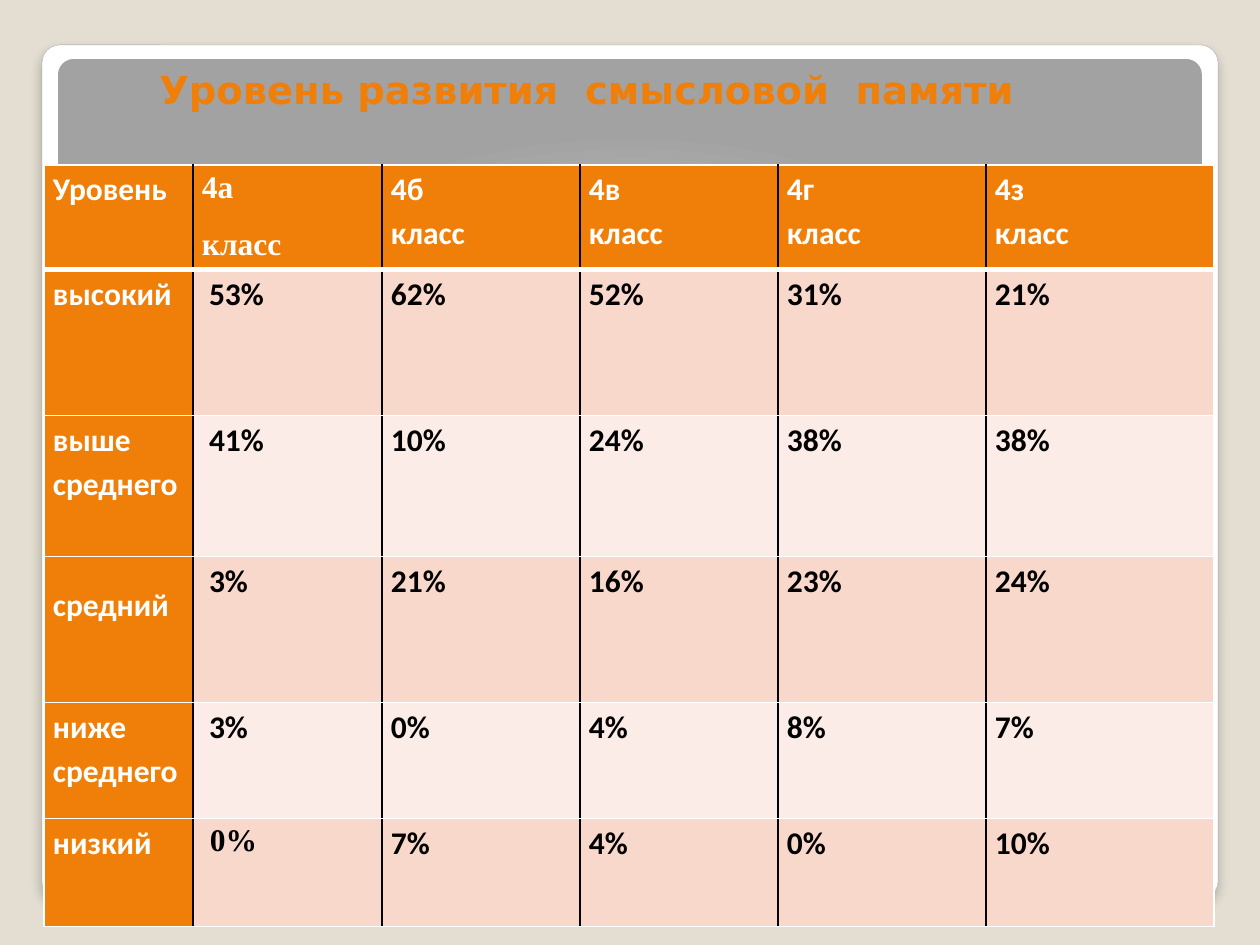
from typing import NamedTuple

from pptx import Presentation
from pptx import util as u
from pptx.dml.color import RGBColor
from pptx.enum import shapes, text
from pptx.oxml import parse_xml
from pptx.oxml.ns import nsdecls, qn

PX_PER_INCH = 126
ORANGE, WHITE, BLACK = "F07F09", "FFFFFF", "000000"
BANDS = ("F9D8CC", "FCECE7")
SERIF = "Times New Roman"


class Panel(NamedTuple):
    box: tuple[int, int, int, int]
    stops: tuple[tuple[int, str], ...]
    direction: str


class Level(NamedTuple):
    label: str
    shares: tuple[str, ...]
    height: int
    label_top: int = 0


CARD = Panel((42, 45, 1176, 854),
             ((0, WHITE), (98, WHITE), (99, "F7F7F7"), (100, "DADADA")),
             '<a:lin ang="5400000" scaled="0"/>')
BACKDROP = Panel((58, 59, 1144, 756),
                 ((0, WHITE), (55, "E1E1E1"), (100, "A2A2A2")),
                 '<a:path path="circle"><a:fillToRect l="50000" t="175000" '
                 'r="50000" b="-75000"/></a:path>')
CLASSES = ("4а", "4б", "4в", "4г", "4з")
COLUMN_WIDTHS = (149, 189, 198, 198, 208, 228)
HEADER_HEIGHT = 92
LEVELS = (
    Level("высокий", (" 53%", "62%", "52%", "31%", "21%"), 146),
    Level("выше\nсреднего", (" 41%", "10%", "24%", "38%", "38%"), 141),
    Level("средний", (" 3%", "21%", "16%", "23%", "24%"), 146, 24),
    Level("ниже\nсреднего", (" 3%", "0%", "4%", "8%", "7%"), 116),
    Level("низкий", (" 0%", "7%", "4%", "0%", "10%"), 108),
)


def px(length: int) -> int:
    return round(length * 914400 / PX_PER_INCH)


def rgb(color: str) -> RGBColor:
    return RGBColor.from_string(color)


def write(frame, content: str, *, size: int = 18, font: str = "Calibri",
          color: str = BLACK, spacing: float = 1.0, after: int = 0) -> None:
    for index, line in enumerate(content.split("\n")):
        paragraph = frame.add_paragraph() if index else frame.paragraphs[0]
        paragraph.line_spacing = spacing
        paragraph.space_after = u.Pt(after)
        run = paragraph.add_run()
        run.text = line
        run.font.size = u.Pt(size)
        run.font.name = font
        run.font.bold = True
        run.font.color.rgb = rgb(color)


def draw_panel(slide, panel: Panel):
    shape = slide.shapes.add_shape(shapes.MSO_SHAPE.ROUNDED_RECTANGLE,
                                   *map(px, panel.box))
    shape.adjustments[0] = 0.021
    shape.line.fill.background()
    shape.shadow.inherit = False
    stops = "".join(
        f'<a:gs pos="{position * 1000}"><a:srgbClr val="{color}"/></a:gs>'
        for position, color in panel.stops)
    shape._element.spPr.insert(2, parse_xml(
        f'<a:gradFill {nsdecls("a")} rotWithShape="1"><a:gsLst>{stops}</a:gsLst>'
        f'{panel.direction}</a:gradFill>'))
    return shape


def outline_and_shadow(card) -> None:
    card.line.color.rgb = rgb("A4A4A4")
    card.line.width = u.Pt(0.16)
    card._element.spPr.find(qn("a:effectLst")).append(parse_xml(
        f'<a:outerShdw {nsdecls("a")} blurRad="{u.Pt(6)}" dist="{u.Pt(4)}" '
        'dir="5400000" algn="tl" rotWithShape="0"><a:srgbClr val="000000">'
        '<a:alpha val="25000"/></a:srgbClr></a:outerShdw>'))


def set_border(cell, side: str, color: str, width: int = 1) -> None:
    cell._tc.get_or_add_tcPr().append(parse_xml(
        f'<a:ln{side} {nsdecls("a")} w="{u.Pt(width)}"><a:solidFill>'
        f'<a:srgbClr val="{color}"/></a:solidFill></a:ln{side}>'))


def fill_cell(table, row: int, column: int, content: str, label_top: int = 0) -> None:
    cell = table.cell(row, column)
    heading = row == 0 or column == 0
    serif = column == 1 and row in (0, len(LEVELS))
    cell.margin_left = cell.margin_right = px(9)
    cell.margin_top, cell.margin_bottom = px(label_top), 0
    set_border(cell, "L", BLACK if column else WHITE)
    set_border(cell, "R", BLACK if column < len(CLASSES) else WHITE)
    set_border(cell, "T", WHITE, 3 if row == 1 else 1)
    set_border(cell, "B", WHITE, 1 if row else 3)
    cell.fill.solid()
    cell.fill.fore_color.rgb = rgb(ORANGE if heading else BANDS[(row - 1) % 2])
    write(cell.text_frame, content, font=SERIF if serif else "Calibri",
          color=WHITE if heading else BLACK, spacing=1.15, after=10 if serif else 0)


def draw_levels(slide) -> None:
    heights = (HEADER_HEIGHT, *(level.height for level in LEVELS))
    table = slide.shapes.add_table(
        len(heights), len(COLUMN_WIDTHS), px(44), px(165),
        px(sum(COLUMN_WIDTHS)), px(sum(heights))).table
    for column, width in zip(table.columns, COLUMN_WIDTHS):
        column.width = px(width)
    for row, height in zip(table.rows, heights):
        row.height = px(height)
    header = ("Уровень", *(f"{name}\nкласс" for name in CLASSES))
    for column, heading in enumerate(header):
        fill_cell(table, 0, column, heading)
    for row, level in enumerate(LEVELS, 1):
        fill_cell(table, row, 0, level.label, level.label_top)
        for column, share in enumerate(level.shares, 1):
            fill_cell(table, row, column, share)


def main() -> None:
    deck = Presentation()
    deck.slide_width, deck.slide_height = px(1260), px(945)
    slide = deck.slides.add_slide(deck.slide_layouts[6])
    slide.background.fill.solid()
    slide.background.fill.fore_color.rgb = rgb("E3DED1")
    outline_and_shadow(draw_panel(slide, CARD))
    draw_panel(slide, BACKDROP)
    title = slide.shapes.add_textbox(px(147), 0, px(1052), px(118)).text_frame
    title.word_wrap = True
    title.vertical_anchor = text.MSO_ANCHOR.BOTTOM
    write(title, "Уровень развития  смысловой  памяти", size=22,
          font="DejaVu Sans", color=ORANGE)
    draw_levels(slide)
    deck.save("out.pptx")


if __name__ == "__main__":
    main()
